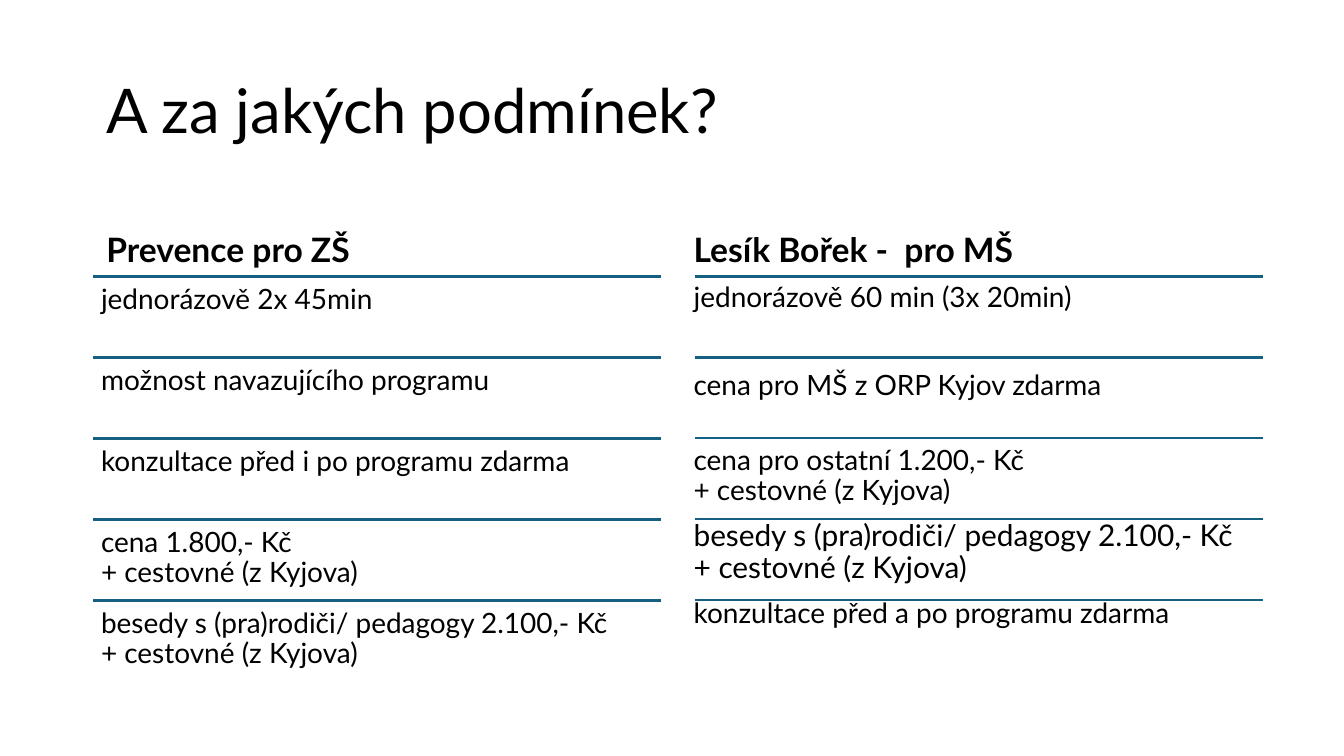
from typing import NamedTuple

from pptx import Presentation
from pptx.dml.color import RGBColor
from pptx.enum.shapes import MSO_CONNECTOR as Connector
from pptx.enum.text import MSO_ANCHOR as Anchor
from pptx.oxml.xmlchemy import OxmlElement
from pptx.util import Cm, Pt

COLORS = {"text": "000000", "rule": "156082"}
FONT = "Lato"
ROW_COUNT = 5
ROW_HEIGHT = 1.53
COLUMN_WIDTH = 10.74


class Item(NamedTuple):
    lines: tuple[str, ...]
    size: float = 15
    before: float = 0
    bold: bool = False


class Box(NamedTuple):
    left: float
    top: float
    width: float
    height: float
    anchor: Anchor = Anchor.TOP
    inset_x: float = 0.25
    inset_y: float = 0.13


def add_text(slide, box: Box, items: list[Item]) -> None:
    """Write each item as one paragraph of a text box."""
    frame = slide.shapes.add_textbox(*map(Cm, box[:4])).text_frame
    frame.word_wrap = True
    frame.vertical_anchor = box.anchor
    frame.margin_left = frame.margin_right = Cm(box.inset_x)
    frame.margin_top = frame.margin_bottom = Cm(box.inset_y)
    for index, item in enumerate(items):
        paragraph = frame.add_paragraph() if index else frame.paragraphs[0]
        paragraph.line_spacing = 0.9
        paragraph.space_before = Pt(item.before)
        for number, line in enumerate(item.lines):
            if number:
                paragraph.add_line_break()
            run = paragraph.add_run()
            run.text = line
            run.font.name = FONT
            run.font.size = Pt(item.size)
            run.font.bold = item.bold
            run.font.color.rgb = RGBColor.from_string(COLORS["text"])


def add_rules(slide, left: float, top: float) -> None:
    """Draw the rule above each row of a column."""
    for row in range(ROW_COUNT):
        y = Cm(top + row * ROW_HEIGHT)
        rule = slide.shapes.add_connector(
            Connector.STRAIGHT, Cm(left), y, Cm(left + COLUMN_WIDTH), y)
        rule.line.color.rgb = RGBColor.from_string(COLORS["rule"])
        rule.line.width = Pt(1.5)
        rule._element.spPr.append(OxmlElement("a:effectLst"))


TRAVEL = "+ cestovné (z Kyjova)"
TALKS = ("besedy s (pra)rodiči/ pedagogy 2.100,- Kč", TRAVEL)

SCHOOL_TERMS = [
    Item(("jednorázově 2x 45min",)),
    Item(("možnost navazujícího programu",)),
    Item(("konzultace před i po programu zdarma",)),
    Item(("cena 1.800,- Kč", TRAVEL)),
    Item(TALKS),
]
KINDERGARTEN_TERMS = [
    Item(("jednorázově 60 min (3x 20min)",)),
    Item(("cena pro MŠ z ORP Kyjov zdarma",), before=31.2),
    Item(("cena pro ostatní 1.200,- Kč", TRAVEL), before=23.7),
    Item(TALKS, size=16, before=7.5),
    Item(("konzultace před a po programu zdarma",), before=7.5),
]


def main() -> None:
    prs = Presentation()
    prs.slide_width, prs.slide_height = Cm(25.4), Cm(14.29)
    slide = prs.slides.add_slide(prs.slide_layouts[6])

    # Title and column headings
    add_text(slide, Box(1.76, 0.76, 21.9, 2.76, Anchor.MIDDLE),
             [Item(("A za jakých podmínek?",), size=33)])
    for left, heading in ((1.76, "Prevence pro ZŠ"),
                          (12.86, "Lesík Bořek -  pro MŠ")):
        add_text(slide, Box(left, 3.51, COLUMN_WIDTH, 1.72, Anchor.BOTTOM),
                 [Item((heading,), size=18, bold=True)])

    # Left column: one box per row
    add_rules(slide, 1.76, 5.23)
    for row, term in enumerate(SCHOOL_TERMS):
        add_text(slide, Box(1.76, 5.24 + row * ROW_HEIGHT, COLUMN_WIDTH,
                            ROW_HEIGHT, inset_x=0.15, inset_y=0.15), [term])

    # Right column: one flowing list over the rules
    add_text(slide, Box(12.86, 5.22, 10.8, 7.67), KINDERGARTEN_TERMS)
    add_rules(slide, 13.13, 5.22)

    prs.save("out.pptx")


if __name__ == "__main__":
    main()
